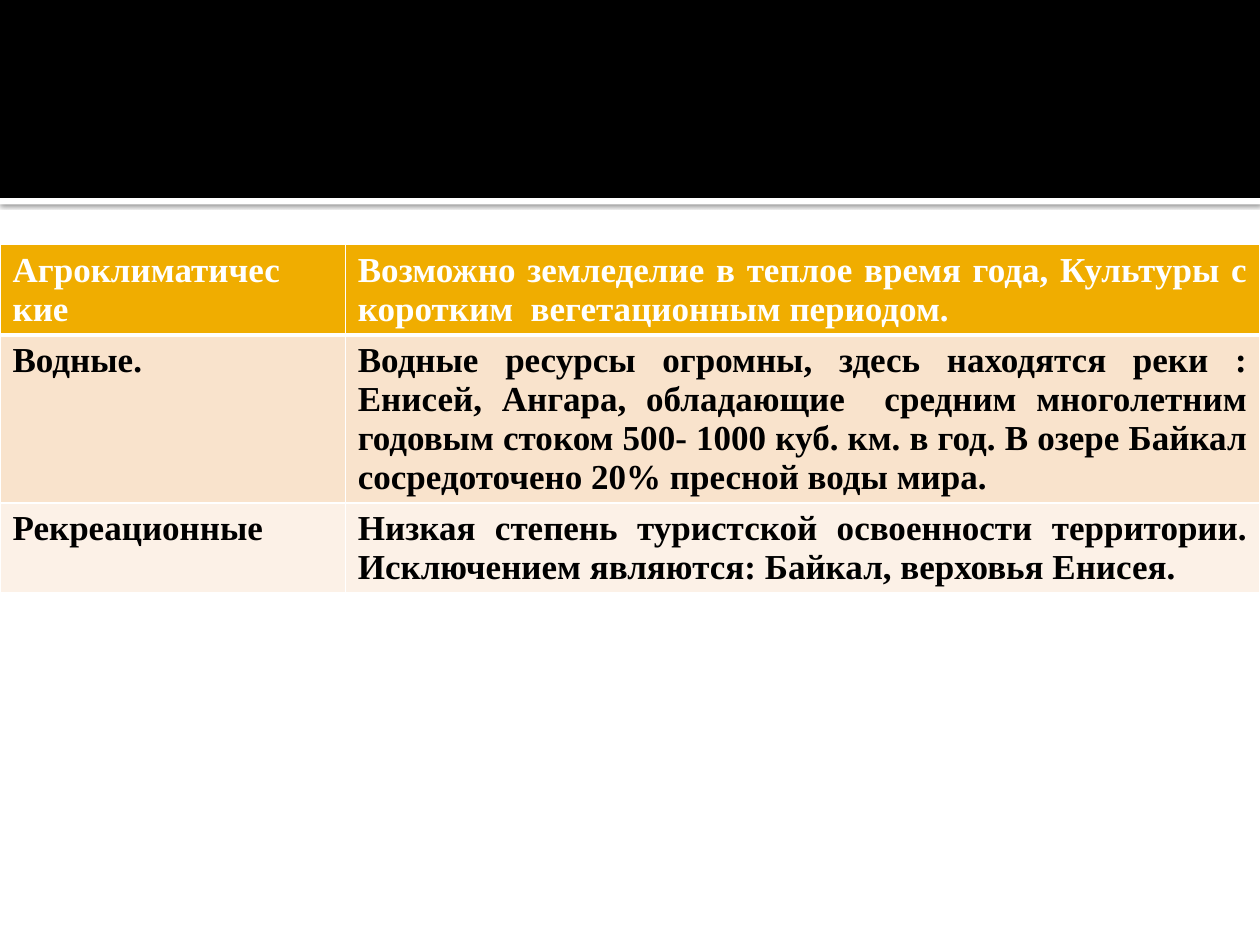
from lxml import etree
from pptx import Presentation
from pptx.dml.color import RGBColor
from pptx.enum.shapes import MSO_SHAPE
from pptx.enum.text import PP_ALIGN
from pptx.oxml.ns import qn
from pptx.util import Cm, Pt

RECT = MSO_SHAPE.RECTANGLE
JUSTIFY = PP_ALIGN.JUSTIFY
FONT = "Times New Roman"
WHITE, BLACK = "FFFFFF", "000000"
SLIDE_W, SLIDE_H = 25.4, 19.05

# (fill, text colour, row height, bottom border in points)
ROW_STYLES = [
    ("F0AD00", WHITE, 1.8, 3),
    ("F9E3CC", BLACK, 3.38, 1),
    ("FCF1E7", BLACK, 1.8, 1),
]
RESOURCES = [
    ("Агроклиматичес кие",
     "Возможно земледелие в теплое время года, Культуры с коротким  "
     "вегетационным периодом."),
    ("Водные.",
     "Водные ресурсы огромны, здесь находятся реки : Енисей, Ангара, "
     "обладающие  средним многолетним годовым стоком 500- 1000 куб. км. в год. "
     "В озере Байкал сосредоточено 20% пресной воды мира. "),
    ("Рекреационные",
     "Низкая степень туристской освоенности территории. "
     "Исключением являются: Байкал, верховья Енисея."),
]


def rgb(color):
    return RGBColor.from_string(color)


def add_child(parent, tag, **attrs):
    return etree.SubElement(parent, qn(tag), {k: str(v) for k, v in attrs.items()})


def add_band(s, x, y, w, h, color):
    sp = s.shapes.add_shape(RECT, Cm(x), Cm(y), Cm(w), Cm(h))
    sp.shadow.inherit = False
    sp.fill.solid()
    sp.fill.fore_color.rgb = rgb(color)
    sp.line.fill.background()
    return sp


def add_shadow(sp):
    effects = sp._element.spPr.find(qn("a:effectLst"))
    shadow = add_child(effects, "a:outerShdw", blurRad=Pt(2.5), dist=Pt(0.8),
                       dir=90 * 60000, algn="t", rotWithShape=0)
    color = add_child(shadow, "a:srgbClr", val=BLACK)
    add_child(color, "a:alpha", val=60000)


def add_header(s, x, y, w, h, rule_h=0.13):
    """Black band with a thin, shadowed white rule under it."""
    add_shadow(add_band(s, x, y + h, w, rule_h, WHITE))
    add_band(s, x, y, w, h, BLACK)


def set_borders(cell, bottom):
    tc_pr = cell._tc.get_or_add_tcPr()
    widths = {"a:lnL": 1, "a:lnR": 1, "a:lnT": 1, "a:lnB": bottom}
    for i, (tag, width) in enumerate(widths.items()):
        line = add_child(tc_pr, tag, w=Pt(width))
        add_child(add_child(line, "a:solidFill"), "a:srgbClr", val=WHITE)
        tc_pr.insert(i, line)


def fill_cell(cell, text, fill, color, bottom):
    cell.fill.solid()
    cell.fill.fore_color.rgb = rgb(fill)
    set_borders(cell, bottom)
    p = cell.text_frame.paragraphs[0]
    p.alignment = JUSTIFY
    r = p.add_run()
    r.text = text
    r.font.name = FONT
    r.font.size = Pt(20)
    r.font.bold = True
    r.font.color.rgb = rgb(color)


def add_resource_table(s, x, y, w, h, label_w=6.96):
    table = s.shapes.add_table(len(RESOURCES), 2, Cm(x), Cm(y), Cm(w), Cm(h)).table
    for column, width in zip(table.columns, (label_w, w - label_w)):
        column.width = Cm(width)
    for i, (texts, style) in enumerate(zip(RESOURCES, ROW_STYLES)):
        fill, color, height, bottom = style
        table.rows[i].height = Cm(height)
        for j, text in enumerate(texts):
            fill_cell(table.cell(i, j), text, fill, color, bottom)


def main():
    prs = Presentation()
    prs.slide_width, prs.slide_height = Cm(SLIDE_W), Cm(SLIDE_H)
    s = prs.slides.add_slide(prs.slide_layouts[6])
    s.background.fill.solid()
    s.background.fill.fore_color.rgb = rgb(WHITE)
    add_header(s, 0, 0, SLIDE_W, 3.99)
    add_resource_table(s, 0, 4.93, SLIDE_W, 6.98)
    prs.save("out.pptx")


if __name__ == "__main__":
    main()
